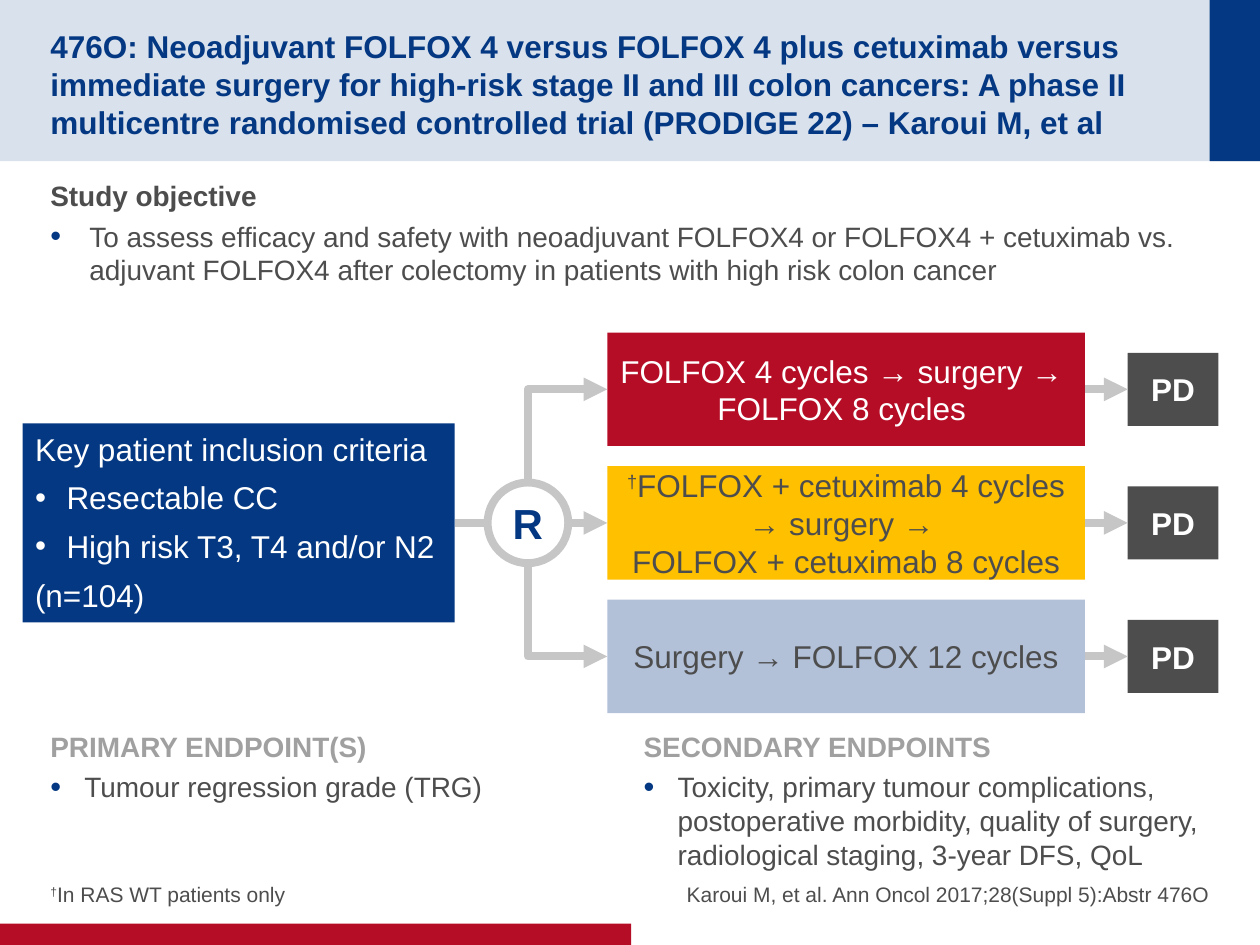
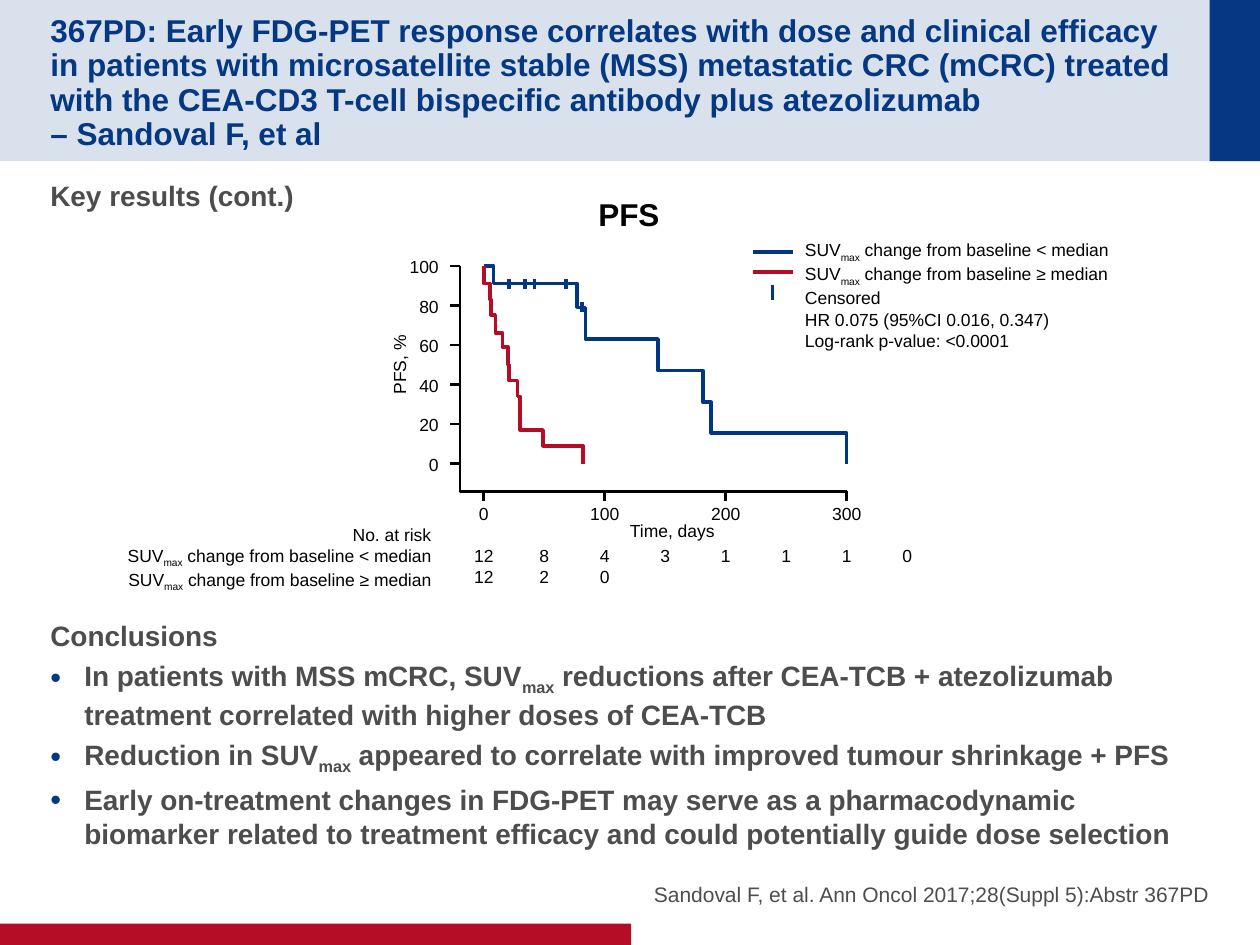
from dataclasses import dataclass
from typing import NamedTuple

from lxml import etree
from pptx import Presentation
from pptx.dml.color import RGBColor
from pptx.enum.dml import MSO_LINE
from pptx.enum.shapes import MSO_CONNECTOR, MSO_SHAPE
from pptx.enum.text import MSO_ANCHOR, MSO_AUTO_SIZE, PP_ALIGN
from pptx.oxml.ns import qn
from pptx.util import Inches, Pt

NAVY = RGBColor(0x04, 0x38, 0x82)
CURVE_BLUE = RGBColor(0x01, 0x36, 0x82)
RED = RGBColor(0xB6, 0x0D, 0x27)
AMBER = RGBColor(0xFF, 0xC0, 0x00)
PALE_BLUE = RGBColor(0xB2, 0xC0, 0xD8)
DARK_GREY = RGBColor(0x4D, 0x4D, 0x4D)
MID_GREY = RGBColor(0xA0, 0xA0, 0xA0)
LIGHT_GREY = RGBColor(0xC6, 0xC6, 0xC6)
BLACK = RGBColor(0, 0, 0)
WHITE = RGBColor(0xFF, 0xFF, 0xFF)

FONT = "Arial"
LEFT, CENTER, RIGHT = PP_ALIGN.LEFT, PP_ALIGN.CENTER, PP_ALIGN.RIGHT
TOP, MIDDLE, BOTTOM = MSO_ANCHOR.TOP, MSO_ANCHOR.MIDDLE, MSO_ANCHOR.BOTTOM
NO_AUTOFIT = MSO_AUTO_SIZE.NONE
RECT, OVAL = MSO_SHAPE.RECTANGLE, MSO_SHAPE.OVAL
STRAIGHT, ELBOW = MSO_CONNECTOR.STRAIGHT, MSO_CONNECTOR.ELBOW
DOTTED = MSO_LINE.SQUARE_DOT
SIDE_TOP, SIDE_LEFT, SIDE_BOTTOM, SIDE_RIGHT = range(4)
TITLE_ONLY = 5

FLUSH = (0, 0.05, 0, 0.05)
INSET = (0.1, 0.05, 0.1, 0.05)
SIDES_ONLY = (0.1, 0, 0.1, 0)
NO_INSET = (0, 0, 0, 0)


class Box(NamedTuple):
    x: float
    y: float
    w: float
    h: float

    def emu(self):
        return [Inches(v) for v in self]


class Run(NamedTuple):
    text: str
    baseline: int = 0


@dataclass
class Para:
    runs: list[Run]
    size: float = 16
    color: RGBColor = DARK_GREY
    bold: bool = False
    align: PP_ALIGN = LEFT
    indent: float = 0
    bullet_color: RGBColor | None = None
    bullet_size: int = 110
    before: float = 0
    after: float = 0
    spacing: float = 1.0


def para(text: str, **style) -> Para:
    return Para([Run(text)], **style)


def bullet(runs: list[Run], indent: float = 0.27, bold: bool = False) -> Para:
    return Para(runs, bold=bold, indent=indent, bullet_color=NAVY, after=4)


def suv_max(lead: str, rest: str) -> list[Run]:
    return [Run(lead + "SUV"), Run("max", -25), Run(" " + rest)]


def add_bullet(p, spec_para: Para) -> None:
    p_pr = p._p.get_or_add_pPr()
    p_pr.set("marL", str(Inches(spec_para.indent)))
    p_pr.set("indent", str(-Inches(spec_para.indent)))
    clr = etree.SubElement(p_pr, qn("a:buClr"))
    etree.SubElement(clr, qn("a:srgbClr"), val=str(spec_para.bullet_color))
    etree.SubElement(p_pr, qn("a:buSzPct"), val=str(spec_para.bullet_size * 1000))
    etree.SubElement(p_pr, qn("a:buFont"), typeface=FONT)
    etree.SubElement(p_pr, qn("a:buChar"), char="•")


def add_run(p, text: str, style: Para, baseline: int) -> None:
    r = p.add_run()
    r.text = text
    r.font.name, r.font.size, r.font.bold = FONT, Pt(style.size), style.bold
    r.font.color.rgb = style.color
    if baseline:
        r._r.get_or_add_rPr().set("baseline", str(baseline * 1000))


def write(sp, paras: list[Para], anchor=TOP, inset=INSET, wrap: bool = True) -> None:
    tf = sp.text_frame
    tf.word_wrap, tf.auto_size, tf.vertical_anchor = wrap, NO_AUTOFIT, anchor
    tf.margin_left, tf.margin_top, tf.margin_right, tf.margin_bottom = map(Inches, inset)
    for i, item in enumerate(paras):
        p = tf.add_paragraph() if i else tf.paragraphs[0]
        p.alignment, p.line_spacing = item.align, item.spacing
        p.space_before, p.space_after = Pt(item.before), Pt(item.after)
        if item.bullet_color is not None:
            add_bullet(p, item)
        for run in item.runs:
            for n, piece in enumerate(run.text.split("\n")):
                if n:
                    p.add_line_break()
                add_run(p, piece, item, run.baseline)


def add_text(slide, box: Box, paras: list[Para], **frame):
    sp = slide.shapes.add_textbox(*box.emu())
    write(sp, paras, **frame)
    return sp


def add_block(slide, box: Box, fill: RGBColor | None, preset=RECT):
    sp = slide.shapes.add_shape(preset, *box.emu())
    sp.shadow.inherit = False
    sp.line.fill.background()
    if fill is None:
        sp.fill.background()
    else:
        sp.fill.solid()
        sp.fill.fore_color.rgb = fill
    return sp


def style_line(line, color: RGBColor, width: float) -> None:
    line.color.rgb = color
    line.width = Pt(width)


def add_line(slide, x1, y1, x2, y2, color: RGBColor, width: float) -> None:
    ends = [Inches(v) for v in (x1, y1, x2, y2)]
    cxn = slide.shapes.add_connector(STRAIGHT, *ends)
    style_line(cxn.line, color, width)
    etree.SubElement(cxn.element.spPr, qn("a:effectLst"))


def add_path(slide, points: list[tuple[float, float]], color: RGBColor, width: float) -> None:
    start, *rest = [(Inches(x), Inches(y)) for x, y in points]
    builder = slide.shapes.build_freeform(*start)
    builder.add_line_segments(rest, close=False)
    sp = builder.convert_to_shape()
    sp.shadow.inherit = False
    sp.fill.background()
    style_line(sp.line, color, width)


def connect(slide, a, a_side: int, b, b_side: int, arrow: str = "", kind=STRAIGHT, dash=None):
    """Join two shapes; arrow is "headEnd" (at a), "tailEnd" (at b) or empty."""
    cxn = slide.shapes.add_connector(kind, 0, 0, 0, 0)
    cxn.begin_connect(a, a_side)
    cxn.end_connect(b, b_side)
    style_line(cxn.line, LIGHT_GREY, 4.5)
    if dash is not None:
        cxn.line.dash_style = dash
    if arrow:
        etree.SubElement(cxn.line._get_or_add_ln(), qn(f"a:{arrow}"), type="triangle")
    if kind == ELBOW:
        cxn.element.spPr.find(qn("a:prstGeom")).set("prst", "bentConnector2")
    etree.SubElement(cxn.element.spPr, qn("a:effectLst"))
    return cxn


def connect_to_oval(slide, a, a_side: int, oval, side: int, **style) -> None:
    """An oval has eight connection sites, so each side counts double."""
    cxn = connect(slide, a, a_side, oval, side, **style)
    for end in cxn.element.iter(qn("a:endCxn")):
        end.set("idx", str(2 * side))


def move_bands_to_layout(slide) -> None:
    layout = slide.slide_layout
    for ph in list(layout.placeholders):
        if ph.placeholder_format.idx:
            ph.element.getparent().remove(ph.element)
    header = add_block(slide, Box(0, 0, 10, 1.28), NAVY)
    for clr in header.element.spPr.iter(qn("a:srgbClr")):
        etree.SubElement(clr, qn("a:alpha"), val="15000")
    corner = add_block(slide, Box(9.6, 0, 0.4, 1.28), NAVY)
    footer = add_block(slide, Box(0, 7.33, 5.01, 0.17), RED)
    for band in (header, corner, footer):
        layout.shapes.element.append(band.element)


def add_slide(prs, title: str, source: str, spacing: float = 1.0):
    slide = prs.slides.add_slide(prs.slide_layouts[TITLE_ONLY])
    sp = slide.shapes.title
    sp.left, sp.top, sp.width, sp.height = Box(0.4, 0.2, 9.01, 0.88).emu()
    write(sp, [para(title, size=18, color=NAVY, bold=True, spacing=spacing)],
          anchor=MIDDLE, inset=(0, 0.05, 0, 0))
    add_text(slide, Box(4.91, 6.67, 4.69, 0.53),
             [para(source, size=12, align=RIGHT, after=4)], anchor=BOTTOM, inset=NO_INSET)
    return slide


class Arm(NamedTuple):
    runs: list[Run]
    fill: RGBColor
    color: RGBColor
    node_side: int
    kind: MSO_CONNECTOR
    pd_dash: MSO_LINE | None


ARMS = [
    Arm([Run("FOLFOX 4 cycles → surgery → \nFOLFOX 8 cycles ")],
        RED, WHITE, SIDE_TOP, ELBOW, None),
    Arm([Run("†", 30),
         Run("FOLFOX + cetuximab 4 cycles → surgery → \nFOLFOX + cetuximab 8 cycles")],
        AMBER, DARK_GREY, SIDE_RIGHT, STRAIGHT, None),
    Arm([Run("Surgery → FOLFOX 12 cycles")],
        PALE_BLUE, DARK_GREY, SIDE_BOTTOM, ELBOW, DOTTED),
]


def build_trial_design(slide) -> None:
    add_text(slide, Box(0.4, 1.37, 9.2, 1), [
        para("Study objective", bold=True, after=4),
        bullet([Run("To assess efficacy and safety with neoadjuvant FOLFOX4 or FOLFOX4 + "
                    "cetuximab vs. adjuvant FOLFOX4 after colectomy in patients with high "
                    "risk colon cancer")], 0.31)], inset=FLUSH)

    criteria = add_block(slide, Box(0.18, 3.36, 3.43, 1.58), NAVY)
    text = dict(size=18, color=WHITE, after=6.2)
    item = dict(text, indent=0.25, bullet_color=WHITE, bullet_size=100)
    write(criteria, [para("Key patient inclusion criteria", **text),
                     para("Resectable CC", **item),
                     para("High risk T3, T4 and/or N2", **item),
                     para("(n=104)", **text)])

    node = add_block(slide, Box(3.87, 3.83, 0.64, 0.64), None, OVAL)
    style_line(node.line, LIGHT_GREY, 4.5)
    write(node, [para("R", size=24, color=NAVY, bold=True, align=CENTER)],
          anchor=MIDDLE, wrap=False)
    connect_to_oval(slide, criteria, SIDE_RIGHT, node, SIDE_LEFT)

    for i, arm in enumerate(ARMS):
        mid = 3.09 + 1.06 * i
        box = add_block(slide, Box(4.82, mid - 0.45, 3.79, 0.9), arm.fill)
        write(box, [Para(arm.runs, size=18, color=arm.color, align=CENTER)],
              anchor=MIDDLE, inset=SIDES_ONLY)
        pd = add_block(slide, Box(8.95, mid - 0.29, 0.72, 0.58), DARK_GREY)
        write(pd, [para("PD", size=18, color=WHITE, bold=True, align=CENTER)],
              anchor=MIDDLE, inset=SIDES_ONLY)
        connect_to_oval(slide, box, SIDE_LEFT, node, arm.node_side,
                        arrow="headEnd", kind=arm.kind)
        connect(slide, box, SIDE_RIGHT, pd, SIDE_LEFT, arrow="tailEnd", dash=arm.pd_dash)

    heading = dict(color=MID_GREY, bold=True, after=4)
    add_text(slide, Box(0.4, 5.74, 4.52, 0.87), [
        para("PRIMARY ENDPOINT(S)", **heading),
        bullet([Run("Tumour regression grade (TRG)")])], inset=FLUSH)
    add_text(slide, Box(5.01, 5.74, 4.67, 0.87), [
        para("SECONDARY ENDPOINTS", **heading),
        bullet([Run("Toxicity, primary tumour complications, postoperative morbidity, "
                    "quality of surgery, radiological staging, 3-year DFS, QoL")])])
    add_text(slide, Box(0.4, 6.67, 4.4, 0.53),
             [Para([Run("†", 30), Run("In RAS WT patients only")], size=12, after=4)],
             anchor=BOTTOM, inset=NO_INSET)


# Each step is (day, PFS % after the drop)
BELOW_MEDIAN = [(8, 91), (77, 79), (84, 63), (144, 47), (181, 31), (188, 15.5), (300, 0)]
ABOVE_MEDIAN = [(0, 91), (5, 83), (6, 75), (9.5, 66), (15.5, 59), (20, 50), (21, 42),
                (28, 34), (30, 17), (49, 9), (82, 0)]
CENSORED = [(21, 91), (34, 91), (42, 91), (68, 91), (81, 79)]
AT_RISK = [(12, 12), (8, 2), (4, 0), (3,), (1,), (1,), (1,), (0,)]  # every 50 days
AXIS_X, AXIS_Y = 3.65, 3.9
TICK = 0.08


def day_x(day: float) -> float:
    return 3.84 + 0.0096 * day


def pfs_y(percent: float) -> float:
    return 3.68 - 0.0157 * percent


def add_curve(slide, steps: list[tuple[float, float]], color: RGBColor) -> None:
    points, level = [(day_x(0), pfs_y(100))], 100
    for day, percent in steps:
        points += [(day_x(day), pfs_y(level)), (day_x(day), pfs_y(percent))]
        level = percent
    add_path(slide, points, color, 2)


def add_labels(slide, box: Box, lines: list[list[Run]], align=LEFT, anchor=TOP):
    return add_text(slide, box, [Para(runs, size=10, color=BLACK, align=align) for runs in lines],
                    anchor=anchor, wrap=False)


def build_pfs_plot(slide) -> None:
    add_text(slide, Box(4.65, 1.5, 0.69, 0.4),
             [para("PFS", size=18, color=BLACK, bold=True)], wrap=False)
    add_path(slide, [(AXIS_X, pfs_y(100)), (AXIS_X, AXIS_Y), (day_x(300), AXIS_Y)], BLACK, 1.5)
    for percent in range(0, 101, 20):
        y = pfs_y(percent)
        add_line(slide, AXIS_X - TICK, y, AXIS_X, y, BLACK, 1.5)
        add_labels(slide, Box(3.14, y - 0.13, 0.44, 0.27), [[Run(str(percent))]], RIGHT, MIDDLE)
    for day in range(0, 301, 100):
        x = day_x(day)
        add_line(slide, x, AXIS_Y, x, AXIS_Y + TICK, BLACK, 1.5)
        add_labels(slide, Box(x - 0.22, 3.94, 0.44, 0.27), [[Run(str(day))]], CENTER)
    add_labels(slide, Box(2.83, 2.76, 0.68, 0.27), [[Run("PFS, %")]], CENTER).rotation = 270
    add_labels(slide, Box(4.89, 4.08, 0.89, 0.27), [[Run("Time, days")]], CENTER)

    add_curve(slide, BELOW_MEDIAN, CURVE_BLUE)
    add_curve(slide, ABOVE_MEDIAN, RED)
    for day, percent in CENSORED:
        x, y = day_x(day), pfs_y(percent)
        add_line(slide, x, y - 0.04, x, y + 0.04, CURVE_BLUE, 2)

    groups = [suv_max("", f"change from baseline {sign} median") for sign in "<≥"]
    add_labels(slide, Box(6.29, 1.85, 2.65, 0.61), groups + [[Run("Censored")]])
    add_labels(slide, Box(6.29, 2.4, 2.15, 0.44),
               [[Run("HR 0.075 (95%CI 0.016, 0.347)")], [Run("Log-rank p-value: <0.0001")]])
    for y, color in ((2, CURVE_BLUE), (2.16, RED)):
        add_line(slide, 5.98, y, 6.29, y, color, 2)
    add_line(slide, 6.13, 2.26, 6.13, 2.38, CURVE_BLUE, 2)

    add_labels(slide, Box(0.87, 4.11, 2.65, 0.61), [[Run("No. at risk")]] + groups, RIGHT)
    for i, counts in enumerate(AT_RISK):
        add_labels(slide, Box(day_x(50 * i) - 0.18, 4.28, 0.36, 0.44),
                   [[Run(str(n))] for n in counts], CENTER)


def build_results(slide) -> None:
    conclusions = [
        suv_max("In patients with MSS mCRC, ", "reductions after CEA-TCB + atezolizumab "
                "treatment correlated with higher doses of CEA-TCB"),
        suv_max("Reduction in ", "appeared to correlate with improved tumour shrinkage + PFS"),
        [Run("Early on-treatment changes in FDG-PET may serve as a pharmacodynamic biomarker "
             "related to treatment efficacy and could potentially guide dose selection")],
    ]
    add_text(slide, Box(0.4, 1.37, 9.2, 5.19), [
        para("Key results (cont.)", bold=True, after=4),
        para("Conclusions", bold=True, before=228, after=4),
        *[bullet(runs, bold=True) for runs in conclusions]], inset=FLUSH)
    build_pfs_plot(slide)


def main() -> None:
    prs = Presentation()
    prs.slide_width, prs.slide_height = Inches(10), Inches(7.5)
    design = add_slide(
        prs, "476O: Neoadjuvant FOLFOX 4 versus FOLFOX 4 plus cetuximab versus immediate "
        "surgery for high-risk stage II and III colon cancers: A phase II multicentre "
        "randomised controlled trial (PRODIGE 22) – Karoui M, et al",
        "Karoui M, et al. Ann Oncol 2017;28(Suppl 5):Abstr 476O")
    move_bands_to_layout(design)
    build_trial_design(design)
    build_results(add_slide(
        prs, "367PD: Early FDG-PET response correlates with dose and clinical efficacy in "
        "patients with microsatellite stable (MSS) metastatic CRC (mCRC) treated with the "
        "CEA-CD3 T-cell bispecific antibody plus atezolizumab \n– Sandoval F, et al",
        "Sandoval F, et al. Ann Oncol 2017;28(Suppl 5):Abstr 367PD", spacing=0.9))
    prs.save("out.pptx")


if __name__ == "__main__":
    main()
